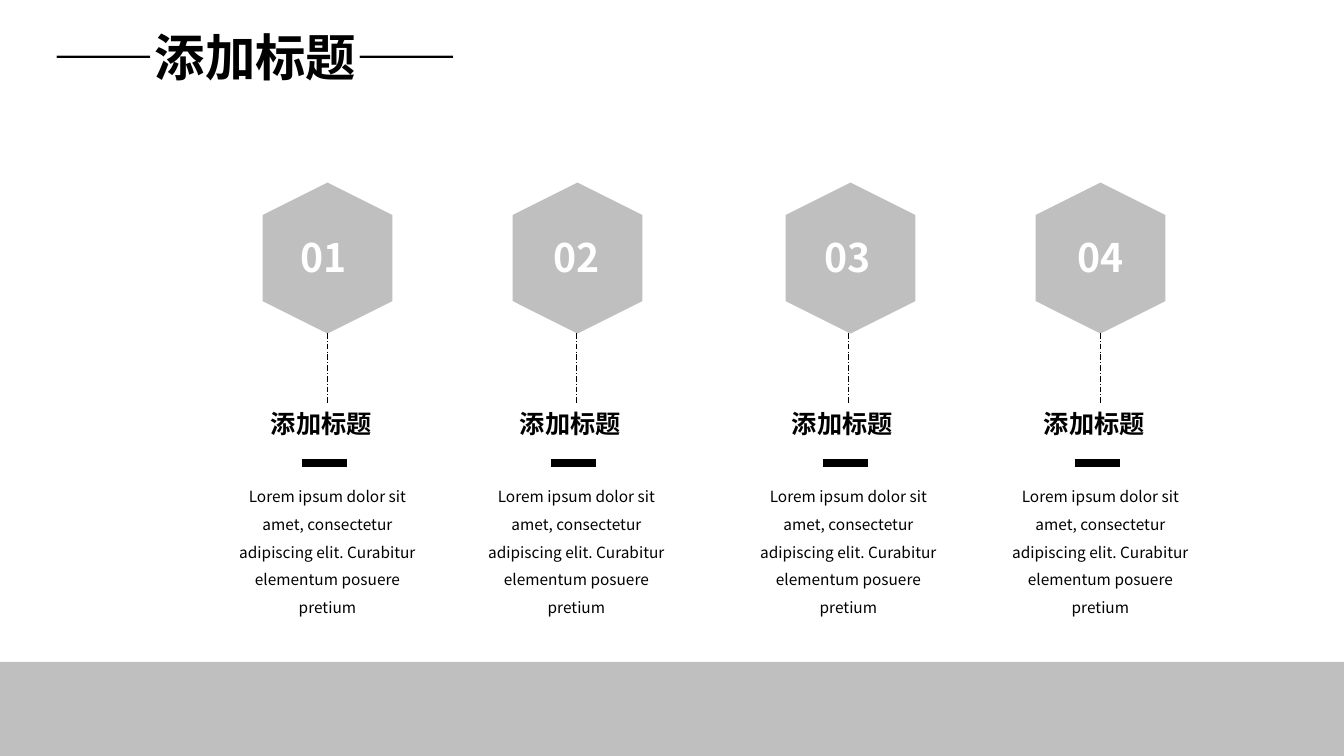
"""Build a four-step hexagon slide with captions and a footer band."""
from lxml.etree import SubElement
from pptx import Presentation
from pptx.dml.color import RGBColor
from pptx.enum.dml import MSO_LINE
from pptx.enum.shapes import MSO_CONNECTOR, MSO_SHAPE
from pptx.enum.text import MSO_AUTO_SIZE, PP_ALIGN
from pptx.oxml.ns import qn
from pptx.util import Pt

PX = 914400 / 100.8
FONT = "Noto Sans CJK SC"
BLACK, WHITE, GRAY = "000000", "FFFFFF", "BFBFBF"

TITLE = "——添加标题——"
HEADING = "添加标题"
BODY = ("Lorem ipsum dolor sit amet, consectetur adipiscing elit. "
        "Curabitur elementum posuere pretium")
STEPS = [
    {"number": "01", "hexagon": 252, "label": 291, "caption": 222},
    {"number": "02", "hexagon": 502, "label": 544, "caption": 471},
    {"number": "03", "hexagon": 775, "label": 815, "caption": 743},
    {"number": "04", "hexagon": 1025, "label": 1068, "caption": 995},
]

TITLE_STYLE = {"size": Pt(36), "bold": True}
NUMBER_STYLE = {"size": Pt(28), "bold": True}
HEADING_STYLE = {"size": Pt(18), "bold": True}
BODY_STYLE = {"size": Pt(11), "bold": False}
BODY_LAYOUT = {"alignment": PP_ALIGN.CENTER, "line_spacing": 1.5}


def emu(*lengths):
    return [round(length * PX) for length in lengths]


def color(value):
    return RGBColor.from_string(value)


def assign(target, values):
    for name, value in values.items():
        setattr(target, name, value)


def add_block(page, kind, *place):
    shape = page.shapes.add_shape(kind, *emu(*place))
    shape.shadow.inherit = False
    shape.fill.solid()
    shape.fill.fore_color.rgb = color(GRAY)
    shape.line.fill.background()
    return shape


def add_text(page, text, place, style, ink=BLACK, layout=None):
    box = page.shapes.add_textbox(*emu(*place))
    assign(box.text_frame, {"word_wrap": True,
                            "auto_size": MSO_AUTO_SIZE.SHAPE_TO_FIT_TEXT})
    para = box.text_frame.paragraphs[0]
    assign(para, layout or {})
    span = para.add_run()
    span.text = text
    assign(span.font, {"name": FONT, **style})
    span.font.color.rgb = color(ink)
    SubElement(span.font._element, qn("a:ea"), typeface=FONT)


def add_line(page, start, end, width, dash=None):
    line = page.shapes.add_connector(MSO_CONNECTOR.STRAIGHT, *emu(*start, *end))
    line.line.color.rgb = color(BLACK)
    assign(line.line, {"width": Pt(width), "dash_style": dash})
    SubElement(line._element.spPr, qn("a:effectLst"))


def add_step(page, step):
    hexagon = add_block(page, MSO_SHAPE.HEXAGON, step["hexagon"], 193, 151, 130)
    hexagon.rotation = 90
    add_text(page, step["number"], (step["label"], 228, 68, 57),
             NUMBER_STYLE, WHITE)
    left = step["caption"]
    middle, bar = left + 105, left + 80
    add_line(page, (middle, 333), (middle, 403), 0.5, MSO_LINE.LONG_DASH_DOT)
    add_text(page, HEADING, (left + 39, 403, 149, 40), HEADING_STYLE)
    add_text(page, BODY, (left, 473, 211, 147), BODY_STYLE, layout=BODY_LAYOUT)
    add_line(page, (bar, 463), (bar + 45, 463), 6)


def main():
    deck = Presentation()
    deck.slide_width, deck.slide_height = emu(1344, 756)
    page = deck.slides.add_slide(deck.slide_layouts[6])
    for step in STEPS:
        add_step(page, step)
    add_block(page, MSO_SHAPE.RECTANGLE, 0, 662, 1344, 101)
    add_text(page, TITLE, (44, 21, 529, 72), TITLE_STYLE)
    deck.save("out.pptx")


if __name__ == "__main__":
    main()
